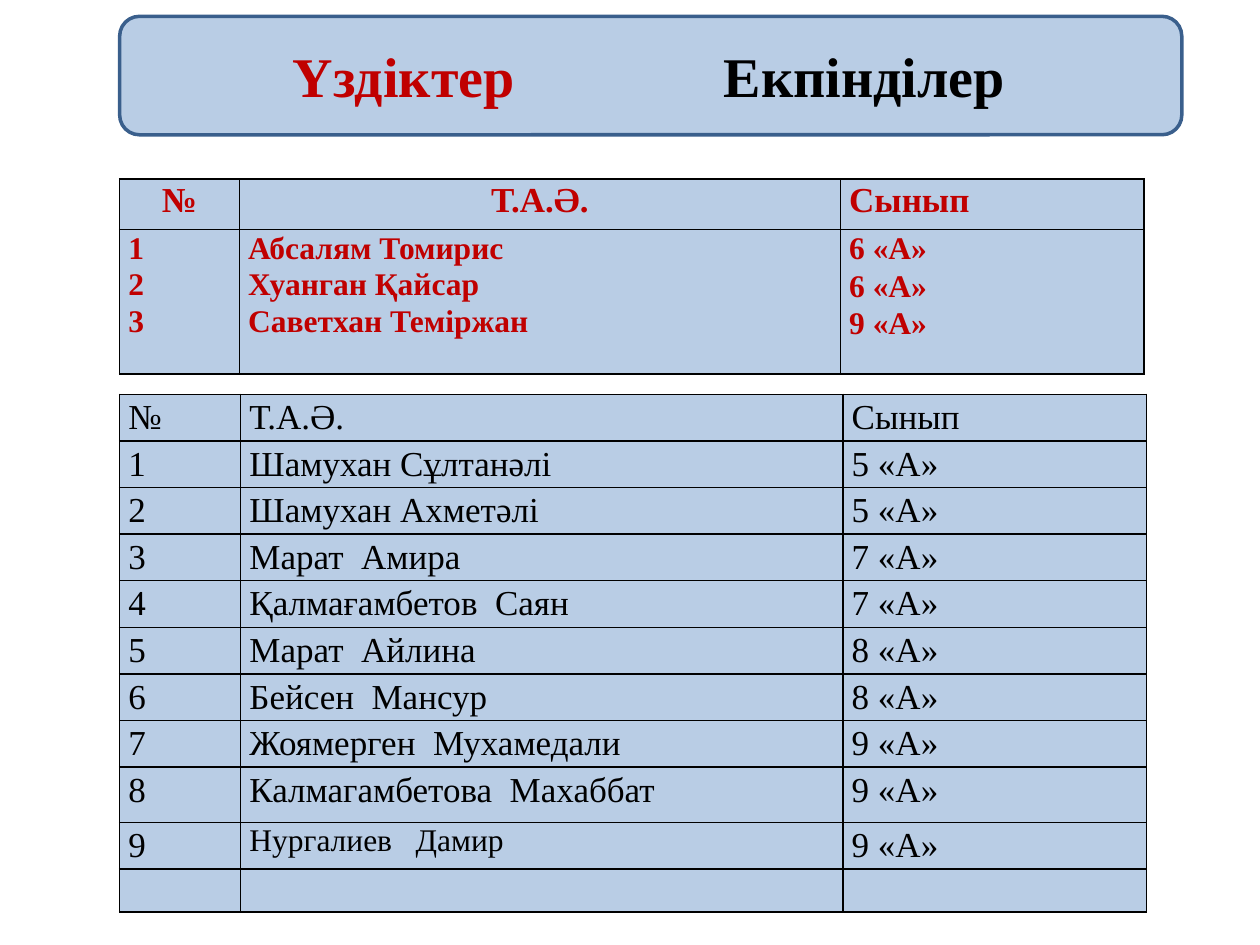
from dataclasses import dataclass

from lxml import etree
from pptx import Presentation
from pptx.dml.color import RGBColor
from pptx.enum.shapes import MSO_SHAPE
from pptx.enum.text import MSO_ANCHOR, PP_ALIGN
from pptx.oxml import parse_xml
from pptx.util import Inches, Pt

ROUNDED = MSO_SHAPE.ROUNDED_RECTANGLE
MIDDLE = MSO_ANCHOR.MIDDLE
LEFT, CENTER = PP_ALIGN.LEFT, PP_ALIGN.CENTER
NS = "http://schemas.openxmlformats.org/drawingml/2006/main"


@dataclass
class Theme:
    font: str = "Times New Roman"
    fill: RGBColor = RGBColor(0xB9, 0xCD, 0xE5)
    outline: RGBColor = RGBColor(0x3A, 0x5F, 0x8C)
    red: RGBColor = RGBColor(0xC0, 0x00, 0x00)
    black: RGBColor = RGBColor(0x00, 0x00, 0x00)
    title: int = 32
    body: int = 20
    small: int = 18


theme = Theme()


def style_font(font, size, color, bold):
    font.name = theme.font
    font.size = Pt(size)
    font.bold = bold
    font.color.rgb = color


def add_grid(s, top, widths, heights, rows, margin_top):
    frame = s.shapes.add_table(len(rows), len(widths), Inches(0.95), Inches(top),
                               Inches(sum(widths)), Inches(sum(heights)))
    table = frame.table
    table.first_row = False
    table.horz_banding = False
    for column, width in zip(table.columns, widths):
        column.width = Inches(width)
    for row, height, texts in zip(table.rows, heights, rows):
        row.height = Inches(height)
        for cell, text in zip(row.cells, texts):
            cell.text = text
            cell.margin_left = cell.margin_right = Inches(0.07)
            cell.margin_top = Inches(margin_top)
            cell.margin_bottom = 0
            tc_pr = cell._tc.get_or_add_tcPr()
            for side in ("lnL", "lnR", "lnT", "lnB"):
                tc_pr.append(parse_xml(
                    f'<a:{side} xmlns:a="{NS}" w="12700"><a:solidFill>'
                    f'<a:srgbClr val="{theme.black}"/></a:solidFill></a:{side}>'))
            cell.fill.solid()
            cell.fill.fore_color.rgb = theme.fill
    return table


prs = Presentation()
prs.slide_width, prs.slide_height = Inches(10), Inches(7.5)
s = prs.slides.add_slide(prs.slide_layouts[6])

excellent = [
    ("№", "Т.А.Ә.", "Сынып"),
    ("1\n2\n3", "Абсалям Томирис\nХуанган Қайсар\nСаветхан Теміржан",
     "6 «А»\n6 «А»\n9 «А»"),
]
table = add_grid(s, 1.42, [0.95, 4.77, 2.41], [0.4, 1.15], excellent, 0)
for i, row in enumerate(table.rows):
    for j, cell in enumerate(row.cells):
        for p in cell.text_frame.paragraphs:
            p.alignment = CENTER if i == 0 and j < 2 else LEFT
            p.line_spacing = 1.07 if i == 1 and j == 2 else 1.05
            style_font(p.font, theme.body if i == 0 else theme.small, theme.red, True)

banner = s.shapes.add_shape(ROUNDED, Inches(0.95), Inches(0.13), Inches(8.43), Inches(0.94))
banner.shadow.inherit = False
banner.fill.solid()
banner.fill.fore_color.rgb = theme.fill
banner.line.color.rgb = theme.outline
banner.line.width = Pt(2)
tf = banner.text_frame
tf.word_wrap = True
tf.vertical_anchor = MIDDLE
tf.margin_left = Inches(1.33)
p = tf.paragraphs[0]
p.alignment = LEFT
tabs = etree.SubElement(p._p.get_or_add_pPr(), f"{{{NS}}}tabLst")
etree.SubElement(tabs, f"{{{NS}}}tab", pos=str(Inches(3.42)), algn="l")
for text, color in (("Үздіктер\t", theme.red), ("Екпінділер", theme.black)):
    r = p.add_run()
    r.text = text
    style_font(r.font, theme.title, color, True)

good_pupils = [
    ("Шамухан Сұлтанәлі", 5),
    ("Шамухан Ахметәлі", 5),
    ("Марат  Амира", 7),
    ("Қалмағамбетов  Саян", 7),
    ("Марат  Айлина", 8),
    ("Бейсен  Мансур", 8),
    ("Жоямерген  Мухамедали", 9),
    ("Калмагамбетова  Махаббат", 9),
    ("Нургалиев   Дамир", 9),
]
good = [("№", "Т.А.Ә.", "Сынып")]
good += [(str(n), name, f"{grade} «А»") for n, (name, grade) in enumerate(good_pupils, 1)]
good.append(("", "", ""))
heights = [0.37] * 8 + [0.44, 0.37, 0.34]
table = add_grid(s, 3.13, [0.96, 4.78, 2.41], heights, good, 0.01)
for i, row in enumerate(table.rows):
    for j, cell in enumerate(row.cells):
        p = cell.text_frame.paragraphs[0]
        compact = i == len(good) - 1 or (i == len(good_pupils) and j == 1)
        if not compact:
            p.line_spacing = 1.07
            p.space_after = Pt(8)
        style_font(p.font, theme.small if compact else theme.body, theme.black, False)

prs.save("out.pptx")
